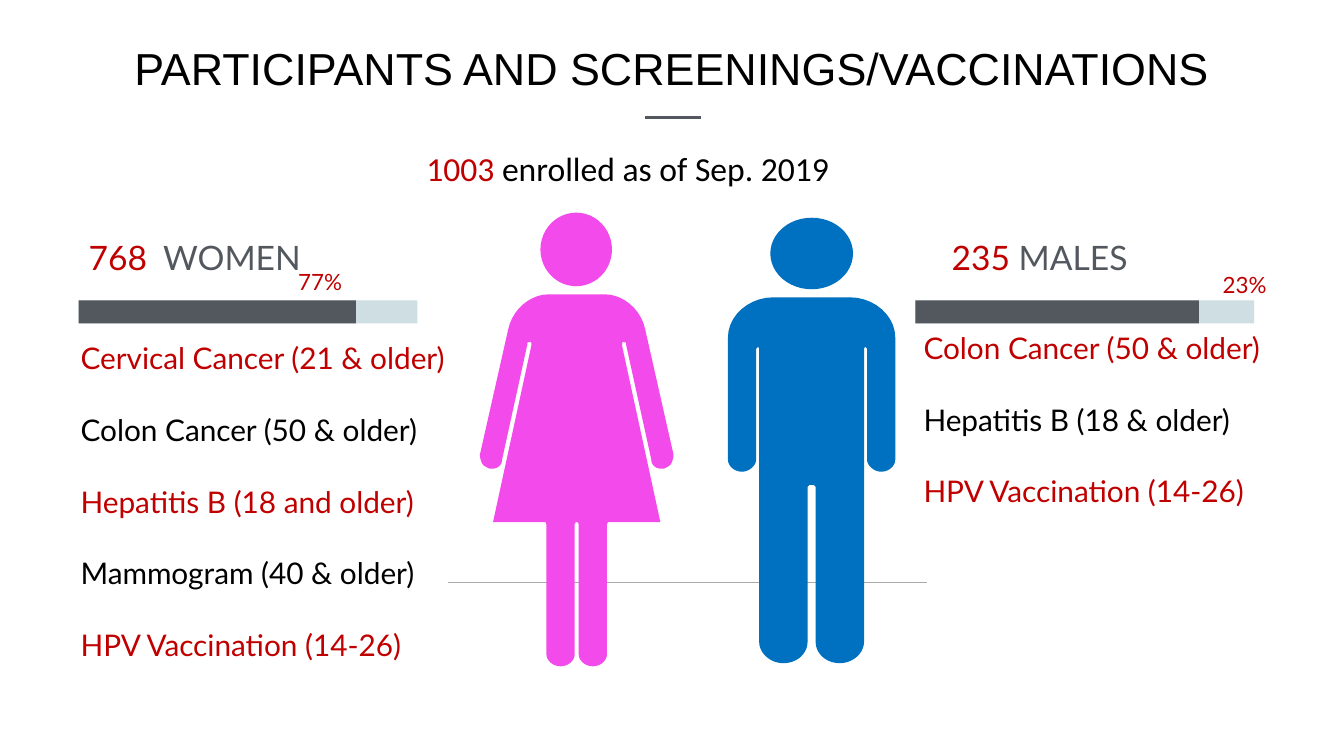
from lxml.etree import SubElement
from pptx import Presentation
from pptx.dml.color import RGBColor
from pptx.enum.shapes import MSO_CONNECTOR, MSO_SHAPE
from pptx.enum.text import MSO_ANCHOR, PP_ALIGN
from pptx.oxml.ns import qn
from pptx.util import Inches, Pt

COLORS = {
    "red": "C00000", "gray": "53585F", "pale": "CEDEE2", "black": "000000",
    "blue": "0070C0", "pink": "F34BEB", "rule": "A6AAA9",
}
MALE = [
    (8.05, 2.95), (7.67, 2.95), (7.43, 2.95, 7.22, 3.13, 7.22, 3.35),
    (7.22, 4.56), (7.22, 4.62, 7.28, 4.68, 7.36, 4.68),
    (7.43, 4.68, 7.5, 4.62, 7.5, 4.56), (7.5, 3.46), (7.52, 3.44),
    (7.53, 3.46), (7.53, 6.37), (7.53, 6.48, 7.64, 6.58, 7.77, 6.58),
    (7.91, 6.58, 8.01, 6.48, 8.01, 6.37), (8.01, 4.83), (8.03, 4.81),
]
FEMALE = [
    (5.72, 2.92), (5.44, 2.92), (5.26, 2.92, 5.08, 3.07, 5.04, 3.27),
    (4.76, 4.51), (4.76, 4.54, 4.77, 4.58, 4.79, 4.61),
    (4.8, 4.62, 4.83, 4.64, 4.86, 4.65), (4.88, 4.65),
    (4.94, 4.65, 4.98, 4.61, 4.98, 4.56), (5.23, 3.42), (5.23, 3.4),
    (5.26, 3.39), (5.27, 3.4), (5.27, 3.43), (4.89, 5.18), (5.41, 5.18),
    (5.42, 5.2), (5.42, 6.49), (5.42, 6.55, 5.48, 6.61, 5.56, 6.61),
    (5.64, 6.61, 5.7, 6.55, 5.7, 6.49), (5.7, 5.2), (5.71, 5.18),
]


def trace(half, steps=10):
    points = [half[0]]
    for part in half[1:]:
        if len(part) == 2:
            points.append(part)
            continue
        x0, y0 = points[-1]
        x1, y1, x2, y2, x3, y3 = part
        for step in range(1, steps + 1):
            t = step / steps
            a, b, c, d = (1 - t) ** 3, 3 * t * (1 - t) ** 2, 3 * t * t * (1 - t), t ** 3
            points.append((a * x0 + b * x1 + c * x2 + d * x3,
                           a * y0 + b * y1 + c * y2 + d * y3))
    axis = half[0][0]
    return points + [(2 * axis - x, y) for x, y in reversed(points[1:])]


class Board:
    def __init__(self, slide, font="Lato"):
        self.slide = slide
        self.font = font

    def color(self, name):
        return RGBColor.from_string(COLORS[name])

    def paint(self, shape, color):
        shape.shadow.inherit = False
        shape.fill.solid()
        shape.fill.fore_color.rgb = self.color(color)
        shape.line.fill.background()

    def shape(self, kind, box, color, home=None):
        shapes = (home or self.slide).shapes
        self.paint(shapes.add_shape(kind, *map(Inches, box)), color)

    def bar(self, left, part):
        for width, color in ((3.36, "pale"), (part, "gray")):
            self.shape(MSO_SHAPE.RECTANGLE, (left, 2.98, width, 0.23), color)

    def text(self, box, rows, size, font=None, align=PP_ALIGN.LEFT,
             inset=None, anchor=MSO_ANCHOR.TOP, gap=0, tab=None):
        frame = self.slide.shapes.add_textbox(*map(Inches, box)).text_frame
        frame.word_wrap = True
        frame.vertical_anchor = anchor
        if inset is not None:
            frame.margin_left = frame.margin_right = Inches(inset)
            frame.margin_top = frame.margin_bottom = Inches(inset)
        for index, row in enumerate(rows):
            para = frame.add_paragraph() if index else frame.paragraphs[0]
            para.alignment = align
            if index:
                para.space_before = Pt(gap)
            if tab:
                stops = SubElement(para._p.get_or_add_pPr(), qn("a:tabLst"))
                SubElement(stops, qn("a:tab"), pos=str(Inches(tab)), algn="l")
            for words, color in row:
                run = para.add_run()
                run.text = words
                run.font.name = font or self.font
                run.font.size = Pt(size)
                run.font.color.rgb = self.color(color)

    def checks(self, box, items):
        rows = [[(item, "black" if index % 2 else "red")]
                for index, item in enumerate(items)]
        self.text(box, rows, 21.3, inset=0.04, gap=25.7)

    def line(self, left, right, y, color, width):
        line = self.slide.shapes.add_connector(
            MSO_CONNECTOR.STRAIGHT, Inches(left), Inches(y), Inches(right), Inches(y))
        line.line.color.rgb = self.color(color)
        line.line.width = Pt(width)
        SubElement(line._element.spPr, qn("a:effectLst"))

    def person(self, head, half, color):
        group = self.slide.shapes.add_group_shape()
        self.shape(MSO_SHAPE.OVAL, head, color, group)
        points = [(Inches(x), Inches(y)) for x, y in trace(half)]
        build = group.shapes.build_freeform(*points[0])
        build.add_line_segments(points[1:], close=True)
        self.paint(build.convert_to_shape(), color)


def main():
    deck = Presentation()
    deck.slide_width, deck.slide_height = Inches(13.33), Inches(7.5)
    board = Board(deck.slides.add_slide(deck.slide_layouts[6]))

    board.text((0, 0.38, 13.33, 0.59),
               [[("PARTICIPANTS AND SCREENINGS/VACCINATIONS", "black")]], 32,
               font="Arial", align=PP_ALIGN.CENTER, inset=0.03, anchor=MSO_ANCHOR.MIDDLE)
    board.line(6.4, 6.95, 1.17, "gray", 2)
    board.text((4.13, 1.42, 4.64, 0.5),
               [[("1003 ", "red"), ("enrolled as of Sep. 2019", "black")]], 24,
               font="Calibri")

    board.bar(0.78, 2.75)
    board.text((0.78, 2.3, 2.75, 0.5), [[("768\t", "red"), ("WOMEN", "gray")]], 24,
               tab=0.74)
    board.text((2.68, 2.61, 0.81, 0.37), [[("77%", "red")]], 16, align=PP_ALIGN.RIGHT)
    board.checks((0.76, 3.33, 3.98, 3.29), [
        "Cervical Cancer (21 & older)", "Colon Cancer (50 & older)",
        "Hepatitis B (18 and older)", "Mammogram (40 & older)",
        "HPV Vaccination (14-26)"])

    board.bar(9.08, 2.81)
    board.text((9.34, 2.3, 2.54, 0.5), [[("235 ", "red"), ("MALES", "gray")]], 24)
    board.text((11.85, 2.64, 0.81, 0.37), [[("23%", "red")]], 16, align=PP_ALIGN.RIGHT)
    board.checks((9.12, 3.23, 3.54, 2.57), [
        "Colon Cancer (50 & older)", "Hepatitis B (18 & older)",
        "HPV Vaccination (14-26)"])

    board.line(4.44, 9.19, 5.78, "rule", 1)
    board.person((7.64, 2.16, 0.82, 0.71), MALE, "blue")
    board.person((5.36, 2.11, 0.71, 0.73), FEMALE, "pink")
    deck.save("out.pptx")


if __name__ == "__main__":
    main()
